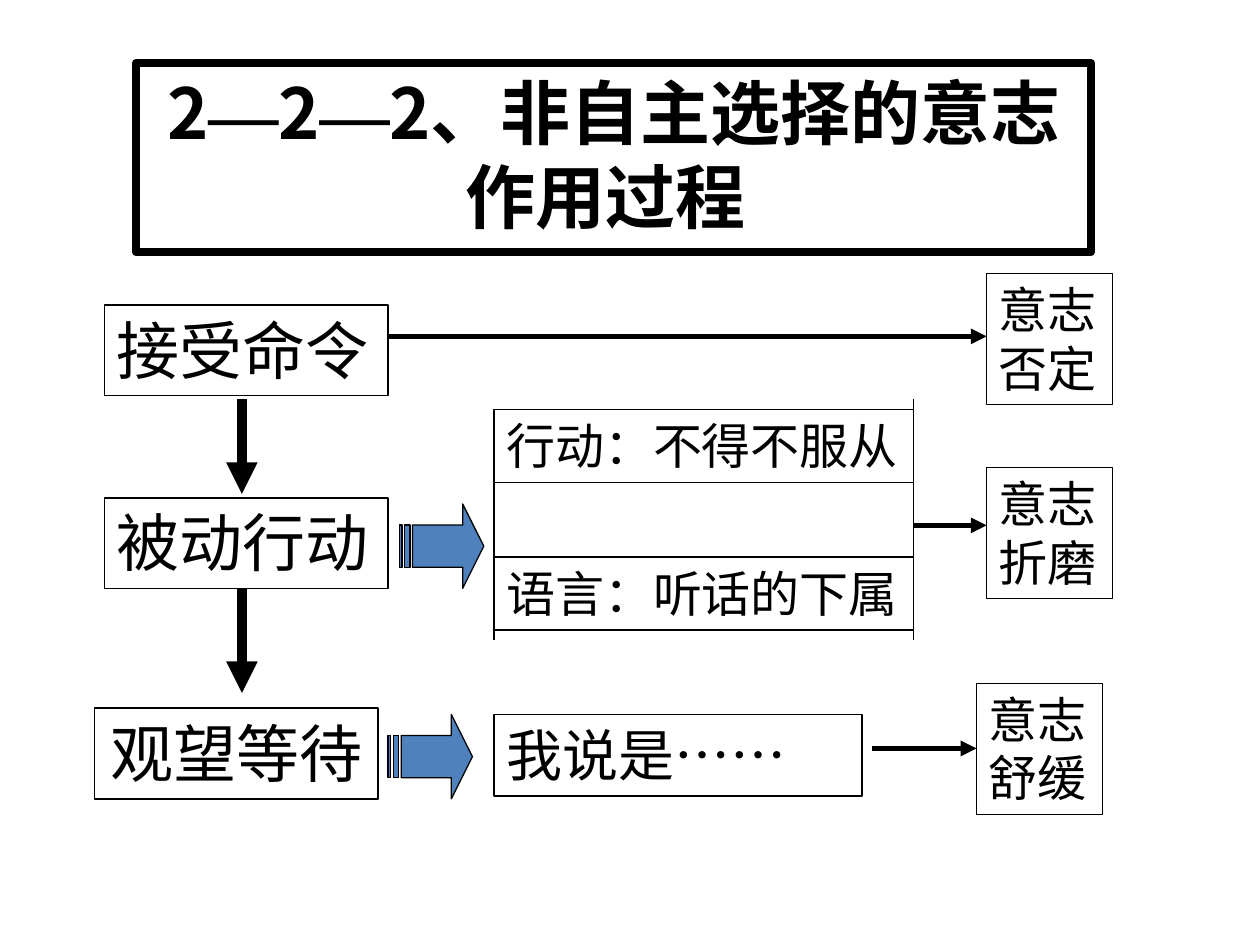
from pptx import Presentation
from pptx.dml.color import RGBColor
from pptx.enum import shapes, text
from pptx.oxml import parse_xml
from pptx.oxml.ns import nsdecls
from pptx.util import Inches, Pt

SERIF, SANS = "Times New Roman", "Noto Sans CJK SC"
BLACK, BLUE = "000000", "4F81BD"


def color(value):
    """Turn a hex string into a colour."""
    return RGBColor.from_string(value)


def outline(sp, width):
    """Draw a black outline of the given width in points."""
    sp.line.color.rgb = color(BLACK)
    sp.line.width = Pt(width)


def write(sp, runs, size, bold=False, align=text.PP_ALIGN.LEFT):
    """Write (words, font) runs as one top-anchored, wrapped paragraph."""
    tf = sp.text_frame
    tf.word_wrap = True
    tf.auto_size = text.MSO_AUTO_SIZE.SHAPE_TO_FIT_TEXT
    tf.vertical_anchor = text.MSO_ANCHOR.TOP
    p = tf.paragraphs[0]
    p.alignment = align
    for words, font in runs:
        r = p.add_run()
        r.text = words
        r.font.name = font
        r.font.size = Pt(size)
        r.font.bold = bold
        r.font.color.rgb = color(BLACK)


def add_title(slide):
    """Place the framed title."""
    sp = slide.shapes.title
    sp.left, sp.top = Inches(1.08), Inches(0.5)
    sp.width, sp.height = Inches(7.58), Inches(1.5)
    outline(sp, 4.5)
    runs = [("2", SANS), ("—", SERIF), ("2", SANS), ("—", SERIF),
            ("2、非自主选择的意志作用过程 ", SANS)]
    write(sp, runs, 40, bold=True, align=text.PP_ALIGN.CENTER)


def add_box(slide, words, x, y, w, h, size, line=1, align=text.PP_ALIGN.LEFT):
    """Add an unfilled, outlined text box."""
    sp = slide.shapes.add_textbox(Inches(x), Inches(y), Inches(w), Inches(h))
    outline(sp, line)
    write(sp, [(words, SERIF)], size, align=align)
    return sp


def add_line(slide, x1, y1, x2, y2, width, arrow=True):
    """Add a straight line, with an arrowhead at its end if asked."""
    sp = slide.shapes.add_connector(shapes.MSO_CONNECTOR.STRAIGHT, Inches(x1),
                                    Inches(y1), Inches(x2), Inches(y2))
    outline(sp, width)
    if arrow:
        sp.line._get_or_add_ln().append(
            parse_xml(f'<a:tailEnd {nsdecls("a")} type="triangle"/>'))
    sp._element.spPr.append(parse_xml(f'<a:effectLst {nsdecls("a")}/>'))
    return sp


def add_striped_arrow(slide, x, y):
    """Add a blue striped arrow with a short head."""
    sp = slide.shapes.add_shape(shapes.MSO_SHAPE.STRIPED_RIGHT_ARROW, Inches(x),
                                Inches(y), Inches(0.67), Inches(0.67))
    sp.adjustments[1] = 0.25
    sp.shadow.inherit = False
    sp.fill.solid()
    sp.fill.fore_color.rgb = color(BLUE)
    outline(sp, 0.75)


def main():
    """Build the slide."""
    prs = Presentation()
    prs.slide_width, prs.slide_height = Inches(10), Inches(7.5)
    slide = prs.slides.add_slide(prs.slide_layouts[5])
    add_title(slide)

    for words, x, y, align in [
            ("接受命令", 0.83, 2.42, text.PP_ALIGN.LEFT),
            ("被动行动", 0.83, 3.95, text.PP_ALIGN.LEFT),
            ("观望等待", 0.75, 5.62, text.PP_ALIGN.CENTER)]:
        add_box(slide, words, x, y, 2.25, 0.72, 36, align=align)

    for words, y in [("行动：不得不服从", 3.25), ("语言：听话的下属", 4.42)]:
        add_box(slide, words, 3.92, y, 3.33, 0.58, 28)
    add_box(slide, "我说是……", 3.92, 5.67, 2.92, 0.65, 32)

    outcomes = [add_box(slide, words, x, y, 1, 1.04, 28, line=0.25)
                for words, x, y in [("意志否定", 7.83, 2.17),
                                    ("意志折磨", 7.83, 3.71),
                                    ("意志舒缓", 7.75, 5.42)]]

    add_striped_arrow(slide, 3.17, 4)
    add_striped_arrow(slide, 3.08, 5.67)

    for x, top in [(3.92, 3.33), (7.25, 3.17)]:
        add_line(slide, x, top, x, 5.08, 0.75, arrow=False)
    for top, bottom in [(3.17, 3.92), (4.67, 5.5)]:
        add_line(slide, 1.92, top, 1.92, bottom, 6)
    add_line(slide, 3.08, 2.67, 7.83, 2.67, 3)
    add_line(slide, 7.25, 4.17, 7.83, 4.17, 3)
    relief = add_line(slide, 6.92, 5.94, 7.75, 5.94, 3)
    relief.end_connect(outcomes[2], 1)

    prs.save("out.pptx")


if __name__ == "__main__":
    main()
